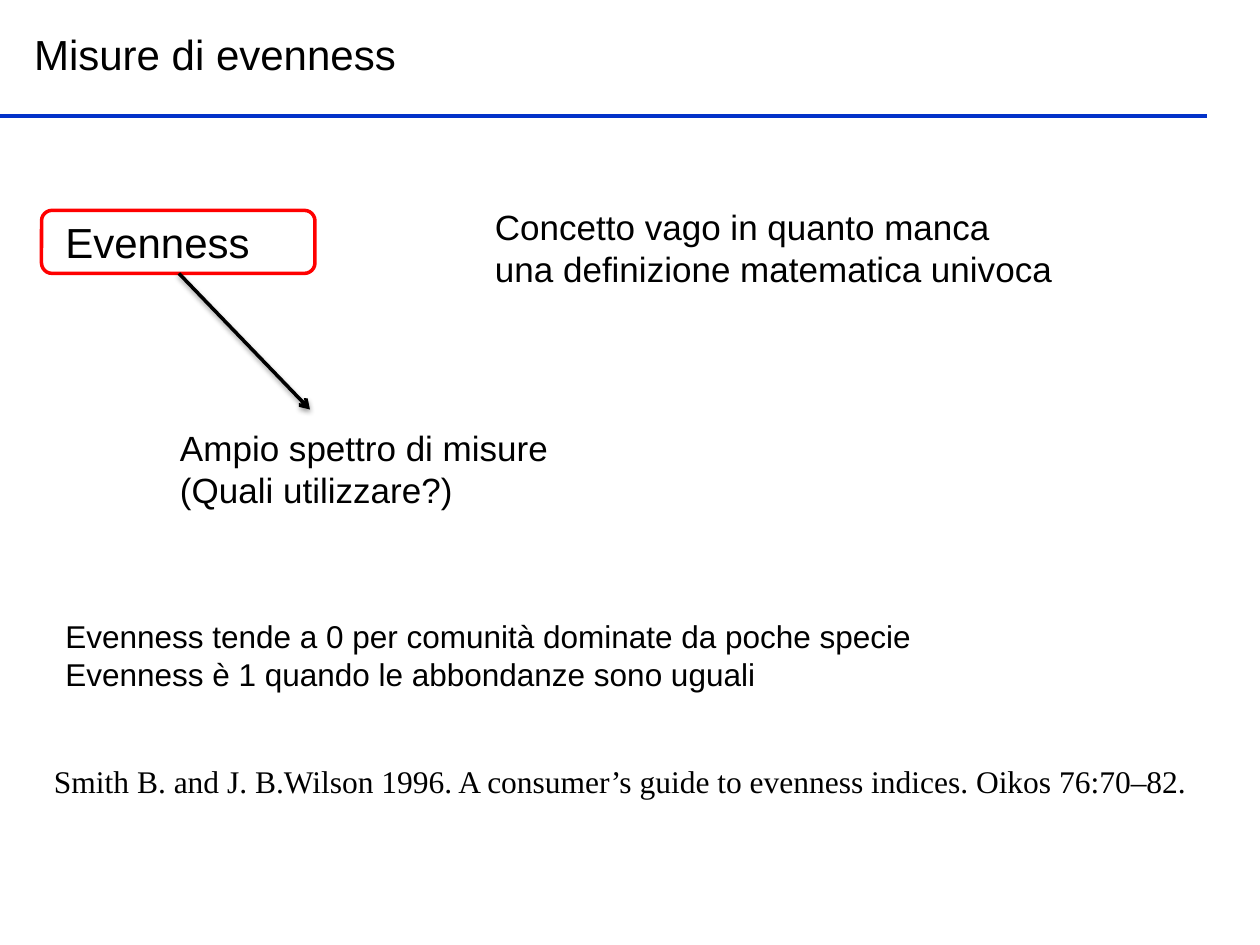
from dataclasses import dataclass

from lxml import etree
from pptx import Presentation
from pptx import util as u
from pptx.dml.color import RGBColor
from pptx.enum import shapes, text
from pptx.oxml import parse_xml
from pptx.oxml.ns import nsdecls, qn

PX = 9144


@dataclass(frozen=True)
class Theme:
    """Colours, fonts and type sizes of the slide."""
    ink: str = "000000"
    rule: str = "0332C9"
    frame: str = "FF0000"
    sans: str = "Arial"
    serif: str = "Times New Roman"
    heading: int = 24
    statement: int = 20
    note: int = 18
    stroke: int = 2


THEME = Theme()
ARROW_SHADOW = (
    f'<a:effectLst {nsdecls("a")}><a:outerShdw blurRad="39370" dist="20320" '
    f'dir="5400000" rotWithShape="0"><a:srgbClr val="{THEME.ink}">'
    '<a:alpha val="38000"/></a:srgbClr></a:outerShdw></a:effectLst>'
)


def px(*lengths):
    """Turn px lengths into EMU."""
    return [u.Emu(length * PX) for length in lengths]


def write(frame, lines, size, font=THEME.sans, wrap=True):
    """Fill a text frame with left-aligned paragraphs."""
    frame.word_wrap = wrap
    frame.auto_size = text.MSO_AUTO_SIZE.NONE
    frame.vertical_anchor = text.MSO_ANCHOR.MIDDLE
    frame.text = "\n".join(lines)
    for paragraph in frame.paragraphs:
        paragraph.alignment = text.PP_ALIGN.LEFT
        paragraph.font.name = font
        paragraph.font.size = u.Pt(size)
        paragraph.font.color.rgb = RGBColor.from_string(THEME.ink)


def add_text(slide, box, *lines, **style):
    """Add a text box in the given box."""
    write(slide.shapes.add_textbox(*px(*box)).text_frame, lines, **style)


def stroke(line, color):
    """Give an outline its colour and the common width."""
    line.color.rgb = RGBColor.from_string(color)
    line.width = u.Pt(THEME.stroke)


def add_line(slide, start, end, color):
    """Add a straight line and return it."""
    line = slide.shapes.add_connector(
        shapes.MSO_CONNECTOR.STRAIGHT, *px(*start, *end))
    stroke(line.line, color)
    return line


def add_header(slide, box):
    """Place the title with the rule below it."""
    left, top, width, height = box
    title = slide.shapes.title
    title.left, title.top, title.width, title.height = px(
        left + 17, top + 18, 850, 50)
    write(title.text_frame, ["Misure di evenness"], THEME.heading)
    rule = add_line(slide, (left, top + height), (left + width, top + height),
                    THEME.rule)
    etree.SubElement(rule._element.spPr, qn("a:effectLst"))


def add_concept(slide, box):
    """Place the framed concept, its definition and the arrow to its measures."""
    left, top, width, height = box
    add_text(slide, (left + 9, top + 9, 200, 50), "Evenness", size=THEME.heading)
    frame = slide.shapes.add_shape(
        shapes.MSO_SHAPE.ROUNDED_RECTANGLE, *px(left, top + 9, 217, 50))
    frame.shadow.inherit = False
    frame.fill.background()
    stroke(frame.line, THEME.frame)

    arrow = add_line(slide, (left + 109, top + 59), (left + 213, top + 167),
                     THEME.ink)
    etree.SubElement(arrow.line._get_or_add_ln(), qn("a:tailEnd"), type="arrow")
    arrow._element.spPr.append(parse_xml(ARROW_SHADOW))

    add_text(slide, (left + 100, top + height - 77, 342, 77),
             "Ampio spettro di misure (Quali utilizzare?)", size=THEME.statement)
    add_text(slide, (left + 350, top, width - 350, 77),
             "Concetto vago in quanto manca una definizione matematica univoca",
             size=THEME.statement)


def add_notes(slide, box):
    """Place the range of evenness and the reference below it."""
    left, top, width, height = box
    add_text(slide, (left + 9, top, 900, 71),
             "Evenness tende a 0 per comunità dominate da poche specie",
             "Evenness è 1 quando le abbondanze sono uguali", size=THEME.note)
    add_text(slide, (left, top + height - 40, width, 40),
             "Smith B. and J. B.Wilson 1996. A consumer’s guide to evenness "
             "indices. Oikos 76:70–82.",
             size=THEME.note, font=THEME.serif, wrap=False)


def main():
    """Build and save the slide."""
    deck = Presentation()
    deck.slide_width, deck.slide_height = px(1000, 750)
    slide = deck.slides.add_slide(deck.slide_layouts.get_by_name("Title Only"))
    add_header(slide, (0, 0, 958, 92))
    add_concept(slide, (33, 158, 814, 252))
    add_notes(slide, (33, 484, 928, 156))
    deck.save("out.pptx")


if __name__ == "__main__":
    main()
